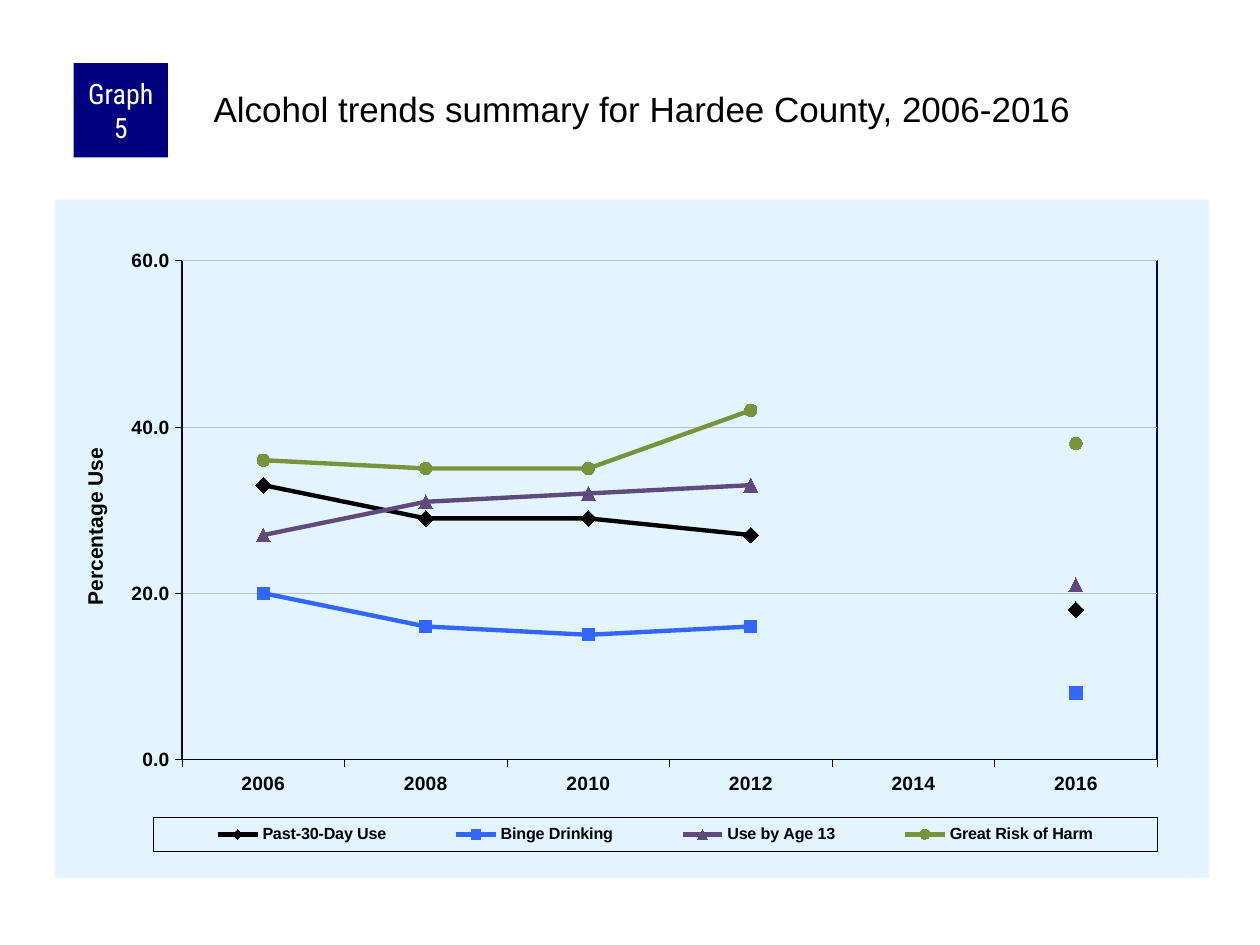
"""Build the slide with the county alcohol trends line chart."""
from lxml import etree
from pptx import Presentation
from pptx.chart.data import CategoryChartData
from pptx.dml.color import RGBColor
from pptx.enum.chart import XL_CHART_TYPE, XL_LEGEND_POSITION, XL_MARKER_STYLE, XL_TICK_MARK
from pptx.enum.shapes import MSO_SHAPE
from pptx.enum.text import MSO_ANCHOR, PP_ALIGN
from pptx.oxml.ns import qn
from pptx.util import Pt

LINE_MARKERS = XL_CHART_TYPE.LINE_MARKERS
BOTTOM = XL_LEGEND_POSITION.BOTTOM
OUTSIDE, NO_TICK = XL_TICK_MARK.OUTSIDE, XL_TICK_MARK.NONE
DIAMOND, SQUARE = XL_MARKER_STYLE.DIAMOND, XL_MARKER_STYLE.SQUARE
TRIANGLE, CIRCLE = XL_MARKER_STYLE.TRIANGLE, XL_MARKER_STYLE.CIRCLE
RECTANGLE = MSO_SHAPE.RECTANGLE
TOP, MIDDLE = MSO_ANCHOR.TOP, MSO_ANCHOR.MIDDLE
LEFT, CENTER = PP_ALIGN.LEFT, PP_ALIGN.CENTER

COLORS = {
    "black": "000000", "white": "FFFFFF", "navy": "000080", "panel": "E1F4FF",
    "grid": "C0C0C0", "blue": "3366FF", "purple": "604A7B", "green": "77933C",
}
TITLE = "Alcohol trends summary for Hardee County, 2006-2016"
BADGE = "Graph 5"
AXIS_TITLE = "Percentage Use"
YEARS = ["2006", "2008", "2010", "2012", "2014", "2016"]
TRENDS = [
    ("Past-30-Day Use", [33, 29, 29, 27, None, 18], "black", DIAMOND, 9),
    ("Binge Drinking", [20, 16, 15, 16, None, 8], "blue", SQUARE, 7),
    ("Use by Age 13", [27, 31, 32, 33, None, 21], "purple", TRIANGLE, 8),
    ("Great Risk of Harm", [36, 35, 35, 42, None, 38], "green", CIRCLE, 7),
]
TITLE_BOX = (120, 48, 570, 60)
BADGE_BOX = (42, 36, 54, 54)
CHART_BOX = (31.5, 114, 659.5, 388)
PLOT_LAYOUT = {"x": 0.11, "y": 0.09, "w": 0.845, "h": 0.735}
LEGEND_LAYOUT = {"x": 0.085, "y": 0.91, "w": 0.87, "h": 0.05}
AXIS_TITLE_LAYOUT = {"x": 0.02, "y": 0.36}


def rgb(color):
    return RGBColor.from_string(COLORS[color])


def style_font(font, size, color="black", face="Arial", bold=False):
    font.size, font.name, font.bold = Pt(size), face, bold
    font.color.rgb = rgb(color)


def style_line(line, color, width):
    line.color.rgb = rgb(color)
    line.width = Pt(width)


def write_text(shape, text, margins, anchor, align, **font):
    frame = shape.text_frame
    frame.word_wrap = True
    frame.vertical_anchor = anchor
    frame.margin_left, frame.margin_top, frame.margin_right, frame.margin_bottom = map(Pt, margins)
    paragraph = frame.paragraphs[0]
    paragraph.alignment = align
    run = paragraph.add_run()
    run.text = text
    style_font(run.font, **font)


def set_layout(parent, fractions, after=None, inner=False):
    for old in parent.findall(qn("c:layout")):
        parent.remove(old)
    layout = etree.Element(qn("c:layout"))
    manual = etree.SubElement(layout, qn("c:manualLayout"))
    settings = {"layoutTarget": "inner"} if inner else {}
    settings.update(xMode="edge", yMode="edge")
    settings.update(fractions)
    for tag, value in settings.items():
        etree.SubElement(manual, qn(f"c:{tag}")).set("val", str(value))
    if after:
        parent.find(qn(after)).addnext(layout)
    else:
        parent.insert(0, layout)


def box_format(fill=None, line=None, width=0):
    properties = etree.Element(qn("c:spPr"))

    def paint(parent, color):
        if color:
            solid = etree.SubElement(parent, qn("a:solidFill"))
            etree.SubElement(solid, qn("a:srgbClr")).set("val", COLORS[color])
        else:
            etree.SubElement(parent, qn("a:noFill"))

    paint(properties, fill)
    outline = etree.SubElement(properties, qn("a:ln"))
    outline.set("w", str(Pt(width)))
    paint(outline, line)
    return properties


def add_trend_chart(slide):
    data = CategoryChartData(number_format="0.0")
    data.categories = YEARS
    for name, values, *_ in TRENDS:
        data.add_series(name, values)
    chart = slide.shapes.add_chart(LINE_MARKERS, *map(Pt, CHART_BOX), data).chart
    chart.has_title = False
    style_font(chart.font, 8)
    plot = chart.plots[0]
    plot.vary_by_categories = False

    for series, (_, _, color, symbol, size) in zip(plot.series, TRENDS):
        series.smooth = False
        style_line(series.format.line, color, 2.5)
        marker = series.marker
        marker.style, marker.size = symbol, size
        marker.format.fill.solid()
        marker.format.fill.fore_color.rgb = rgb(color)
        style_line(marker.format.line, color, 0.75)

    years, percentages = chart.category_axis, chart.value_axis
    for axis in (years, percentages):
        axis.major_tick_mark, axis.minor_tick_mark = OUTSIDE, NO_TICK
        style_font(axis.tick_labels.font, 11, bold=True)
        style_line(axis.format.line, "black", 0.25)
    percentages.minimum_scale, percentages.maximum_scale, percentages.major_unit = 0, 60, 20
    percentages.tick_labels.number_format = "0.0"
    percentages.tick_labels.number_format_is_linked = False
    style_line(percentages.major_gridlines.format.line, "grid", 0.25)

    heading = percentages.axis_title
    run = heading.text_frame.paragraphs[0].add_run()
    run.text = AXIS_TITLE
    style_font(run.font, 12, bold=True)
    title_xml = percentages._element.find(qn("c:title"))
    title_xml.find(".//" + qn("a:bodyPr")).set("rot", "-5400000")
    set_layout(title_xml, AXIS_TITLE_LAYOUT, after="c:tx")

    chart.has_legend = True
    legend = chart.legend
    legend.position, legend.include_in_layout = BOTTOM, False
    style_font(legend.font, 9.2, bold=True)

    root = chart._chartSpace.find(qn("c:chart"))
    plot_xml, legend_xml = root.find(qn("c:plotArea")), root.find(qn("c:legend"))
    set_layout(plot_xml, PLOT_LAYOUT, inner=True)
    set_layout(legend_xml, LEGEND_LAYOUT, after="c:legendPos")
    plot_xml.append(box_format(line="navy", width=1))
    legend_xml.find(qn("c:overlay")).addnext(box_format(line="black", width=0.25))
    root.addnext(box_format(fill="panel"))


def main():
    deck = Presentation()
    deck.slide_width, deck.slide_height = Pt(720), Pt(540)
    slide = deck.slides.add_slide(deck.slide_layouts[5])

    title = slide.shapes.title
    title.left, title.top, title.width, title.height = map(Pt, TITLE_BOX)
    write_text(title, TITLE, (2, 2, 0, 0), TOP, LEFT, size=20)

    badge = slide.shapes.add_shape(RECTANGLE, *map(Pt, BADGE_BOX))
    badge.shadow.inherit = False
    badge.fill.solid()
    badge.fill.fore_color.rgb = rgb("navy")
    badge.line.fill.background()
    write_text(badge, BADGE, (3.6, 0, 3.6, 0), MIDDLE, CENTER,
               size=16, color="white", face="Roboto Condensed")

    add_trend_chart(slide)
    deck.save("out.pptx")


if __name__ == "__main__":
    main()
